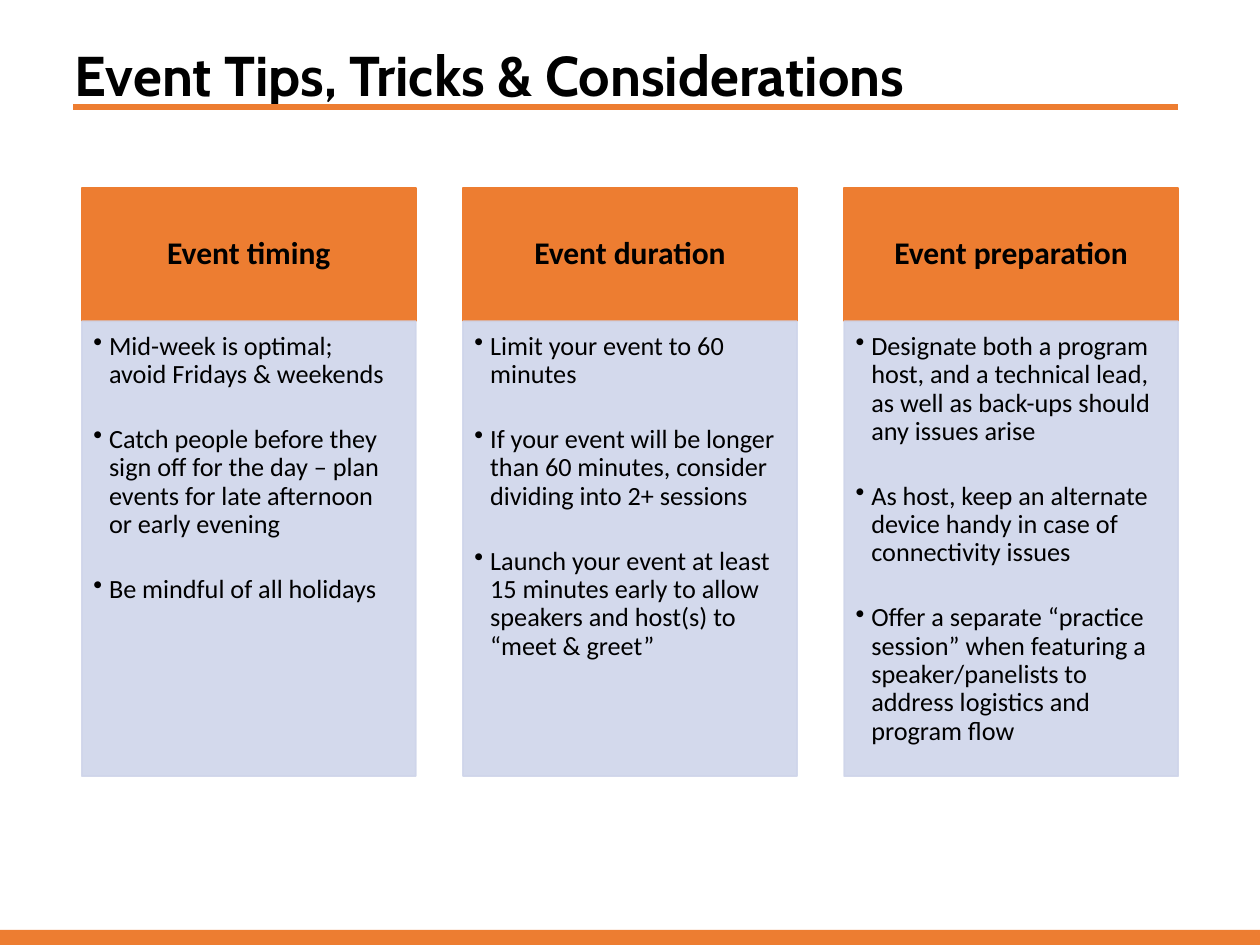
import pptx
import pptx.dml.color
import pptx.enum.shapes
import pptx.enum.text
import pptx.oxml
import pptx.oxml.ns
import pptx.util
from pptx.util import Inches

ORANGE = "ED7D31"
LAVENDER = "CFD5EA"
BLACK = "000000"

LEFT, TOP = 0.65, 1.49
COLUMN_WIDTH, COLUMN_STEP = 2.65, 3.025
HEADER_HEIGHT, BODY_HEIGHT = 1.06, 3.61

COLUMNS = [
    ("Event timing", [
        "Mid-week is optimal;\vavoid Fridays & weekends",
        "Catch people before they sign off for the day – plan events for late afternoon or early evening",
        "Be mindful of all holidays",
    ]),
    ("Event duration", [
        "Limit your event to 60 minutes",
        "If your event will be longer than 60 minutes, consider dividing into 2+ sessions",
        "Launch your event at least 15 minutes early to allow speakers and host(s) to “meet & greet”",
    ]),
    ("Event preparation", [
        "Designate both a program host, and a technical lead, as well as back-ups should any issues arise",
        "As host, keep an alternate device handy in case of connectivity issues",
        "Offer a separate “practice session” when featuring a speaker/panelists to address logistics and program flow",
    ]),
]


def color(value):
    return pptx.dml.color.RGBColor.from_string(value)


def set_opacity(fill_owner, percent):
    """Make the solid fill found below an XML element partly transparent."""
    for solid in fill_owner.findall(pptx.oxml.ns.qn("a:solidFill")):
        solid[0].append(pptx.oxml.parse_xml(
            f'<a:alpha {pptx.oxml.ns.nsdecls("a")} val="{percent * 1000}"/>'))


def add_rectangle(slide, left, top, width, height, fill, outlined=True, opacity=100):
    shape = slide.shapes.add_shape(
        pptx.enum.shapes.MSO_SHAPE.RECTANGLE,
        Inches(left), Inches(top), Inches(width), Inches(height))
    shape.shadow.inherit = False
    shape.fill.solid()
    shape.fill.fore_color.rgb = color(fill)
    if outlined:
        shape.line.color.rgb = color(fill)
        shape.line.width = pptx.util.Pt(1)
    else:
        shape.line.fill.background()
    if opacity < 100:
        properties = shape.fill._xPr
        set_opacity(properties, opacity)
        set_opacity(properties.find(pptx.oxml.ns.qn("a:ln")), opacity)
    return shape


def set_frame(frame, anchor, insets):
    frame.word_wrap = True
    frame.vertical_anchor = anchor
    (frame.margin_left, frame.margin_top,
     frame.margin_right, frame.margin_bottom) = map(Inches, insets)


def write(paragraph, text, size, font="Calibri", bold=False,
          align=pptx.enum.text.PP_ALIGN.LEFT):
    paragraph.alignment = align
    paragraph.line_spacing = 0.9
    for index, line in enumerate(text.split("\v")):
        if index:
            paragraph.add_line_break()
        run = paragraph.add_run()
        run.text = line
        run.font.name = font
        run.font.size = pptx.util.Pt(size)
        run.font.bold = bold
        run.font.color.rgb = color(BLACK)


def add_bullet(paragraph):
    properties = paragraph._p.get_or_add_pPr()
    properties.set("marL", str(Inches(0.125)))
    properties.set("indent", str(-Inches(0.125)))
    properties.append(pptx.oxml.parse_xml(
        f'<a:buChar {pptx.oxml.ns.nsdecls("a")} char="•"/>'))


def add_title(slide, text):
    box = slide.shapes.add_textbox(Inches(0.49), Inches(0.25), Inches(8.7), Inches(0.74))
    set_frame(box.text_frame, pptx.enum.text.MSO_ANCHOR.MIDDLE, (0.1, 0.05, 0.1, 0.05))
    write(box.text_frame.paragraphs[0], text, 32, font="Cabin", bold=True)


def add_rule(slide, left, right, y):
    rule = slide.shapes.add_connector(
        pptx.enum.shapes.MSO_CONNECTOR.STRAIGHT,
        Inches(left), Inches(y), Inches(right), Inches(y))
    rule.line.color.rgb = color(ORANGE)
    rule.line.width = pptx.util.Pt(3)
    rule._element.spPr.append(pptx.oxml.parse_xml(
        f'<a:effectLst {pptx.oxml.ns.nsdecls("a")}/>'))


def add_column(slide, left, heading, tips):
    header = add_rectangle(slide, left, TOP, COLUMN_WIDTH, HEADER_HEIGHT, ORANGE)
    set_frame(header.text_frame, pptx.enum.text.MSO_ANCHOR.MIDDLE, (0.14, 0.08, 0.14, 0.08))
    write(header.text_frame.paragraphs[0], heading, 18, bold=True,
          align=pptx.enum.text.PP_ALIGN.CENTER)

    body = add_rectangle(slide, left, TOP + HEADER_HEIGHT, COLUMN_WIDTH, BODY_HEIGHT,
                         LAVENDER, opacity=90)
    frame = body.text_frame
    set_frame(frame, pptx.enum.text.MSO_ANCHOR.TOP, (0.09, 0.09, 0.12, 0.13))
    for index, tip in enumerate(tips):
        paragraph = frame.add_paragraph() if index else frame.paragraphs[0]
        add_bullet(paragraph)
        if index:
            paragraph.space_before = pptx.util.Pt(20.8)
        write(paragraph, tip, 15)


def main():
    presentation = pptx.Presentation()
    presentation.slide_width = Inches(10)
    presentation.slide_height = Inches(7.5)
    slide = presentation.slides.add_slide(presentation.slide_layouts[6])

    add_rectangle(slide, 0, 7.38, 10, 0.12, ORANGE, outlined=False)
    add_title(slide, "Event Tips, Tricks & Considerations")
    add_rule(slide, 0.58, 9.35, 0.85)
    for index, (heading, tips) in enumerate(COLUMNS):
        add_column(slide, LEFT + index * COLUMN_STEP, heading, tips)

    presentation.save("out.pptx")


if __name__ == "__main__":
    main()
